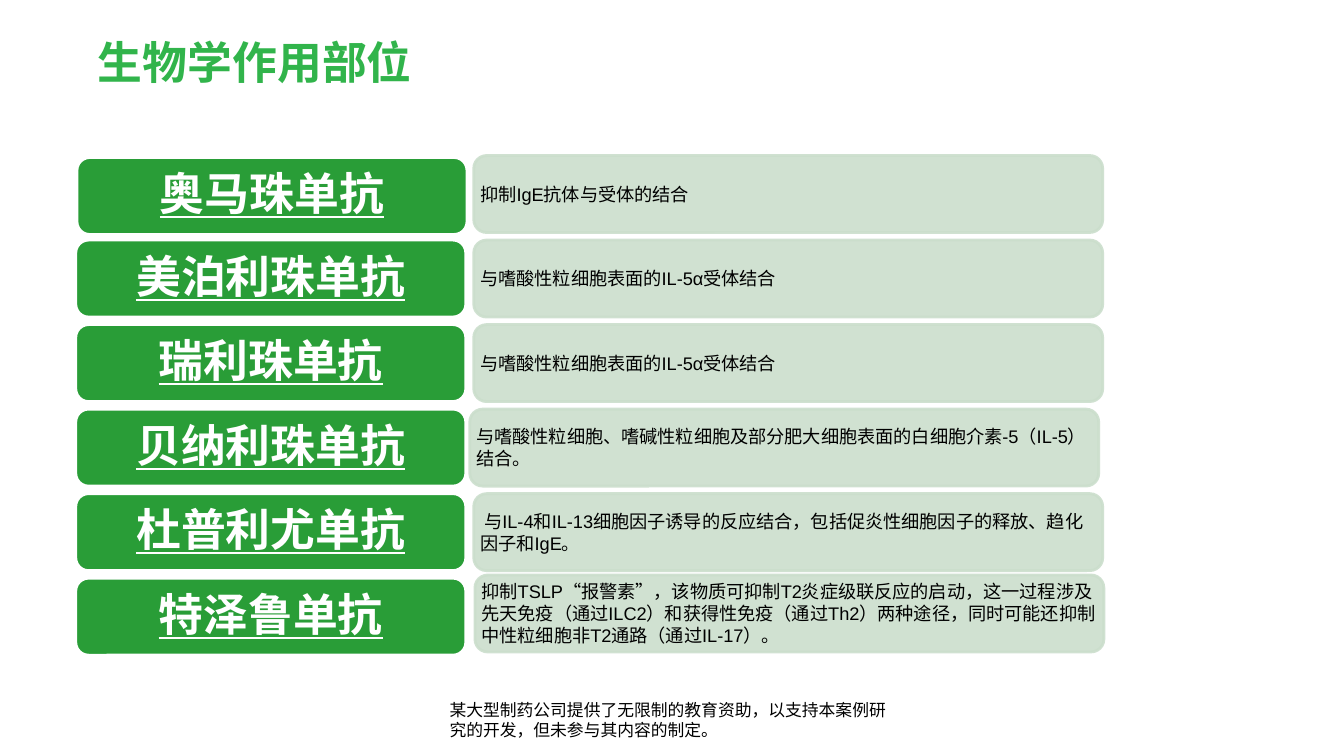
"""Build the slide on the biological sites of action of six antibodies."""
import pptx
import pptx.dml.color
import pptx.enum.shapes
import pptx.enum.text
import pptx.oxml
import pptx.oxml.ns
import pptx.util

Cm = pptx.util.Cm
Pt = pptx.util.Pt
RGBColor = pptx.dml.color.RGBColor
Align = pptx.enum.text.PP_ALIGN
Anchor = pptx.enum.text.MSO_ANCHOR

TITLE = "生物学作用部位"
FOOTNOTE = "某大型制药公司提供了无限制的教育资助，以支持本案例研究的开发，但未参与其内容的制定。"
ANTIBODIES = [
    ("奥马珠单抗", "抑制IgE抗体与受体的结合"),
    ("美泊利珠单抗", "与嗜酸性粒细胞表面的IL-5α受体结合"),
    ("瑞利珠单抗", "与嗜酸性粒细胞表面的IL-5α受体结合"),
    ("贝纳利珠单抗", "与嗜酸性粒细胞、嗜碱性粒细胞及部分肥大细胞表面的白细胞介素-5（IL-5）结合。"),
    ("杜普利尤单抗", "与IL-4和IL-13细胞因子诱导的反应结合，包括促炎性细胞因子的释放、趋化因子和IgE。"),
    ("特泽鲁单抗", "抑制TSLP“报警素”，该物质可抑制T2炎症级联反应的启动，这一过程涉及先天免疫（通过ILC2）"
                "和获得性免疫（通过Th2）两种途径，同时可能还抑制中性粒细胞非T2通路（通过IL-17）。"),
]
NAME_SHIFTS = {0: (0.03, 0.05)}
EFFECT_SHIFTS = {3: (-0.1, 0), 5: (0.03, -0.08)}
EFFECT_INDENTS = {4: 0.1}

TITLE_GREEN = RGBColor(0x31, 0xB4, 0x4B)
NAME_GREEN = RGBColor(0x29, 0x9D, 0x37)
EFFECT_GREEN = RGBColor(0xCB, 0xDE, 0xCC)
WHITE = RGBColor(0xFF, 0xFF, 0xFF)
BLACK = RGBColor(0, 0, 0)

FIRST_TOP, ROW_PITCH, CARD_HEIGHT = 3.92, 2.13, 1.94
NAME_LEFT, NAME_WIDTH = 1.91, 9.83
EFFECT_LEFT, EFFECT_WIDTH = 11.94, 15.85


def write(shape, text, font_name, size, color, inset, bold=False, underline=False):
    frame = shape.text_frame
    frame.word_wrap = True
    frame.margin_left = frame.margin_right = Cm(inset)
    frame.margin_top = frame.margin_bottom = Cm(inset)
    frame.text = text
    paragraph = frame.paragraphs[0]
    paragraph.alignment = Align.LEFT
    font = paragraph.runs[0].font
    font.name, font.size, font.bold, font.underline = font_name, Pt(size), bold, underline
    font.color.rgb = color
    return paragraph


def add_card(slide, left, top, width, fill, line):
    card = slide.shapes.add_shape(
        pptx.enum.shapes.MSO_SHAPE.ROUNDED_RECTANGLE,
        Cm(left), Cm(top), Cm(width), Cm(CARD_HEIGHT))
    card.shadow.inherit = False
    card.fill.solid()
    card.fill.fore_color.rgb = fill
    card.line.color.rgb = line
    card.line.width = Pt(2)
    card.text_frame.vertical_anchor = Anchor.MIDDLE
    return card


def make_translucent(card, percent):
    for color in card.element.spPr.iter(pptx.oxml.ns.qn("a:srgbClr")):
        alpha = pptx.oxml.parse_xml(
            f'<a:alpha {pptx.oxml.ns.nsdecls("a")} val="{percent * 1000}"/>')
        color.append(alpha)


def add_row(slide, index, name, effect):
    top = FIRST_TOP + index * ROW_PITCH

    shift_x, shift_y = EFFECT_SHIFTS.get(index, (0, 0))
    effect_card = add_card(slide, EFFECT_LEFT + shift_x, top + shift_y,
                           EFFECT_WIDTH, EFFECT_GREEN, EFFECT_GREEN)
    make_translucent(effect_card, 90)
    paragraph = write(effect_card, effect, "Arial", 13, BLACK, 0.07)
    if index in EFFECT_INDENTS:
        paragraph._p.get_or_add_pPr().set("indent", str(Cm(EFFECT_INDENTS[index])))

    shift_x, shift_y = NAME_SHIFTS.get(index, (0, 0))
    name_card = add_card(slide, NAME_LEFT + shift_x, top + shift_y,
                         NAME_WIDTH, NAME_GREEN, WHITE)
    paragraph = write(name_card, name, "Arial", 32, WHITE, 0.25, bold=True, underline=True)
    paragraph.alignment = Align.CENTER
    paragraph.line_spacing = 0.9


def main():
    presentation = pptx.Presentation()
    presentation.slide_width, presentation.slide_height = Cm(33.87), Cm(19.05)
    slide = presentation.slides.add_slide(presentation.slide_layouts[6])

    footnote = slide.shapes.add_textbox(Cm(11.2), Cm(17.5), Cm(11.46), Cm(1.45))
    write(footnote, FOOTNOTE, "Cambria", 12, BLACK, 0.13)

    title = slide.shapes.add_textbox(Cm(2.34), Cm(0.91), Cm(25.45), Cm(2.16))
    write(title, TITLE, "Arial", 32, TITLE_GREEN, 0.13, bold=True).line_spacing = 0.9

    for index, (name, effect) in enumerate(ANTIBODIES):
        add_row(slide, index, name, effect)

    presentation.save("out.pptx")


if __name__ == "__main__":
    main()
